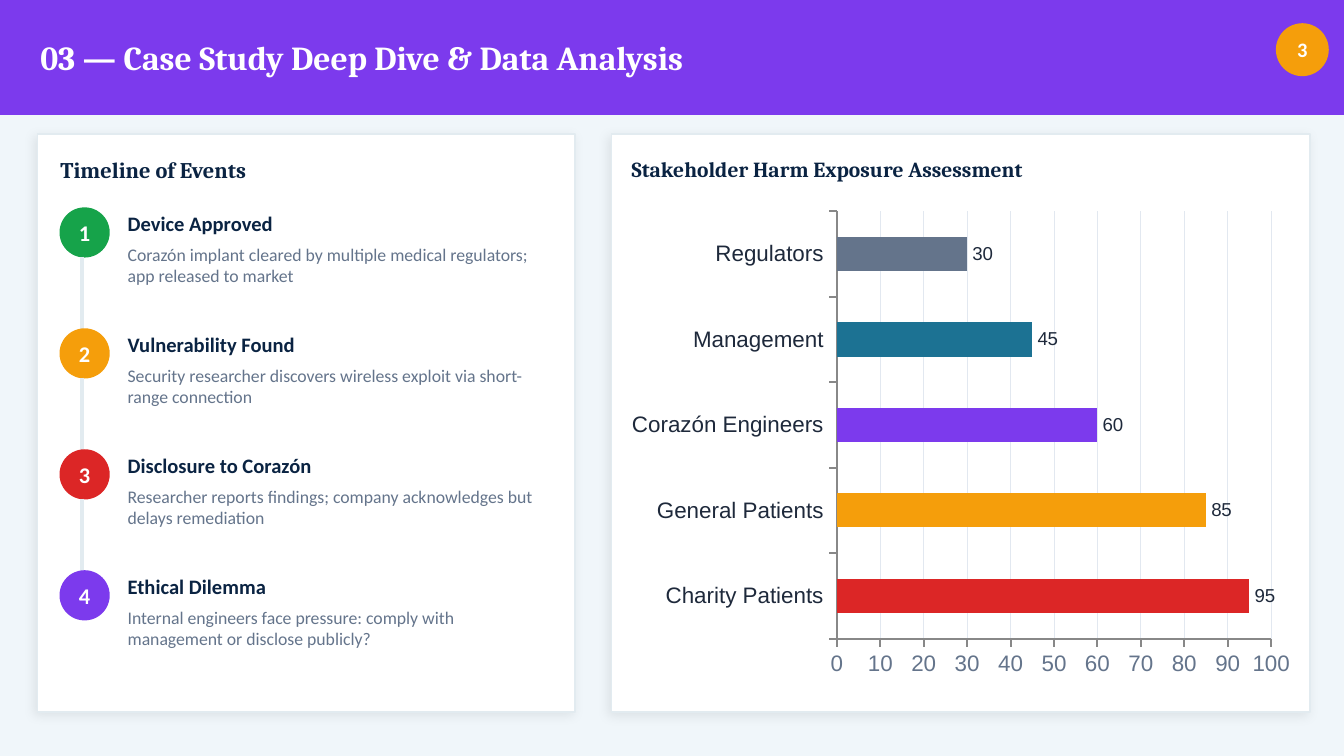
from lxml.etree import SubElement
from pptx import Presentation
from pptx.chart.data import CategoryChartData
from pptx.dml.color import RGBColor
from pptx.enum.chart import XL_CHART_TYPE, XL_LABEL_POSITION, XL_TICK_LABEL_POSITION, XL_TICK_MARK
from pptx.enum.shapes import MSO_CONNECTOR, MSO_SHAPE
from pptx.enum.text import MSO_ANCHOR, MSO_AUTO_SIZE, PP_ALIGN
from pptx.oxml.ns import qn
from pptx.util import Inches, Pt

COLORS = {
    "purple": "7C3AED", "amber": "F59E0B", "green": "16A34A", "red": "DC2626",
    "teal": "1C7293", "slate": "64748B", "navy": "0A2342", "ink": "1E293B",
    "white": "FFFFFF", "page": "F0F6FA", "rule": "E2EBF0", "grid": "E2E8F0",
    "axis": "888888",
}
COLUMNS, ROWS = 100, 56.25
CELL = Inches(0.1)
FIRST_EVENT, EVENT_PITCH, BADGE = 15.5, 9, 3.6
EVENTS = [
    ("Device Approved", "green",
     "Corazón implant cleared by multiple medical regulators; app released to market"),
    ("Vulnerability Found", "amber",
     "Security researcher discovers wireless exploit via short-range connection"),
    ("Disclosure to Corazón", "red",
     "Researcher reports findings; company acknowledges but delays remediation"),
    ("Ethical Dilemma", "purple",
     "Internal engineers face pressure: comply with management or disclose publicly?"),
]
EXPOSURE = [
    ("Charity Patients", 95, "red"),
    ("General Patients", 85, "amber"),
    ("Corazón Engineers", 60, "purple"),
    ("Management", 45, "teal"),
    ("Regulators", 30, "slate"),
]


def color(name):
    """Return the palette colour of this name."""
    return RGBColor.from_string(COLORS[name])


def cells(*lengths):
    """Turn grid columns and rows into slide lengths."""
    return [round(length * CELL) for length in lengths]


def style_font(font, face, size, ink, bold=False):
    """Set face, size, colour and weight of a font."""
    font.name, font.size, font.bold = face, Pt(size), bold
    font.color.rgb = color(ink)


def write(shape, text, face, size, ink, bold=True, align=PP_ALIGN.LEFT):
    """Put one formatted, vertically centred paragraph into a shape."""
    frame = shape.text_frame
    frame.text = text
    frame.word_wrap = True
    frame.auto_size = MSO_AUTO_SIZE.NONE
    frame.vertical_anchor = MSO_ANCHOR.MIDDLE
    frame.margin_left = frame.margin_right = frame.margin_top = frame.margin_bottom = 0
    paragraph = frame.paragraphs[0]
    paragraph.alignment = align
    style_font(paragraph.runs[0].font, face, size, ink, bold)


def add_label(slide, area, text, face, size, ink, bold=True):
    """Add a text box on the grid."""
    write(slide.shapes.add_textbox(*cells(*area)), text, face, size, ink, bold)


def add_block(slide, kind, area, fill, line):
    """Add a filled, outlined shape on the grid."""
    block = slide.shapes.add_shape(kind, *cells(*area))
    block.shadow.inherit = False
    block.fill.solid()
    block.fill.fore_color.rgb = color(fill)
    block.line.color.rgb = color(line)
    block.line.width = Pt(1)
    return block


def add_badge(slide, left, top, side, number, fill, size):
    """Add a numbered circle."""
    badge = add_block(slide, MSO_SHAPE.OVAL, (left, top, side, side), fill, fill)
    write(badge, str(number), "Calibri", size, "white", align=PP_ALIGN.CENTER)
    badge.text_frame.word_wrap = False


def add_card(slide, left, width, heading, heading_area, size):
    """Add a white card with a soft shadow and a heading."""
    card = add_block(slide, MSO_SHAPE.RECTANGLE, (left, 10, width, 43), "white", "rule")
    effects = card.element.spPr.find(qn("a:effectLst"))
    shadow = SubElement(effects, qn("a:outerShdw"), blurRad=str(Pt(6)), dist=str(Pt(2)),
                        dir=str(135 * 60000), algn="bl", rotWithShape="0")
    tint = SubElement(shadow, qn("a:srgbClr"), val="000000")
    SubElement(tint, qn("a:alpha"), val="7000")
    add_label(slide, heading_area, heading, "Cambria", size, "navy")


def add_header(slide):
    """Add the title band, the title and the section badge."""
    band = add_block(slide, MSO_SHAPE.RECTANGLE, (0, 0, COLUMNS, 8.5), "purple", "purple")
    title = slide.shapes.title
    title.left, title.top, title.width, title.height = cells(3, 0, 94, 8.5)
    write(title, "03 — Case Study Deep Dive & Data Analysis", "Cambria", 18, "white")
    band.element.addnext(title.element)
    add_badge(slide, 95, 1.8, 3.8, 3, "amber", 11)


def add_link(slide, column, start, end):
    """Add a vertical line between two timeline badges."""
    link = slide.shapes.add_connector(MSO_CONNECTOR.STRAIGHT, *cells(column, start, column, end))
    link.line.color.rgb = color("rule")
    link.line.width = Pt(2)
    SubElement(link.element.spPr, qn("a:effectLst"))


def add_timeline(slide):
    """Add the events, one grid pitch apart."""
    for index, (event, fill, detail) in enumerate(EVENTS):
        top = FIRST_EVENT + index * EVENT_PITCH
        add_badge(slide, 4.5, top, BADGE, index + 1, fill, 12)
        if index < len(EVENTS) - 1:
            add_link(slide, 6.1, top + BADGE, top + EVENT_PITCH)
        add_label(slide, (9.5, top, 31, 2.2), event, "Calibri", 11, "navy")
        add_label(slide, (9.5, top + 2.2, 31, 4), detail, "Calibri", 9.5, "slate", bold=False)


def style_axis(axis, ink):
    """Format the line, ticks and labels of an axis."""
    axis.major_tick_mark = XL_TICK_MARK.OUTSIDE
    axis.minor_tick_mark = XL_TICK_MARK.NONE
    axis.format.line.color.rgb = color("axis")
    axis.format.line.width = Pt(1)
    style_font(axis.tick_labels.font, "Arial", 12, ink)


def add_exposure_chart(slide):
    """Add the bar chart with one colour per stakeholder."""
    names, scores, fills = zip(*EXPOSURE)
    data = CategoryChartData()
    data.categories = names
    data.add_series("Series 1", scores)
    chart = slide.shapes.add_chart(XL_CHART_TYPE.BAR_CLUSTERED, *cells(46, 15, 51, 36), data).chart
    chart.has_legend = chart.has_title = False
    chart.font.name, chart.font.size = "Calibri", Pt(10)

    style_axis(chart.category_axis, "ink")
    chart.category_axis.has_major_gridlines = False
    scale = chart.value_axis
    style_axis(scale, "slate")
    scale.tick_label_position = XL_TICK_LABEL_POSITION.LOW
    scale.minimum_scale, scale.maximum_scale, scale.major_unit = 0, 100, 10
    scale.has_major_gridlines = True
    scale.major_gridlines.format.line.color.rgb = color("grid")
    scale.major_gridlines.format.line.width = Pt(0.5)

    plot = chart.plots[0]
    plot.gap_width = 150
    plot.vary_by_categories = False
    bars = plot.series[0]
    bars.format.fill.solid()
    bars.format.fill.fore_color.rgb = color(fills[0])
    for index, fill in enumerate(fills[1:], 1):
        bar = bars.points[index].format.fill
        bar.solid()
        bar.fore_color.rgb = color(fill)
    labels = bars.data_labels
    labels.show_value = True
    labels.number_format, labels.number_format_is_linked = "#,##0", False
    labels.position = XL_LABEL_POSITION.OUTSIDE_END
    style_font(labels.font, "Arial", 10, "ink")


def main():
    """Build the slide and save it."""
    deck = Presentation()
    deck.slide_width, deck.slide_height = cells(COLUMNS, ROWS)
    slide = deck.slides.add_slide(deck.slide_layouts[5])
    slide.background.fill.solid()
    slide.background.fill.fore_color.rgb = color("page")
    add_header(slide)
    add_card(slide, 2.8, 40, "Timeline of Events", (4.5, 11, 36, 3.2), 12)
    add_timeline(slide)
    add_card(slide, 45.5, 52, "Stakeholder Harm Exposure Assessment", (47, 11, 48, 3.2), 11.5)
    add_exposure_chart(slide)
    deck.save("out.pptx")


if __name__ == "__main__":
    main()
